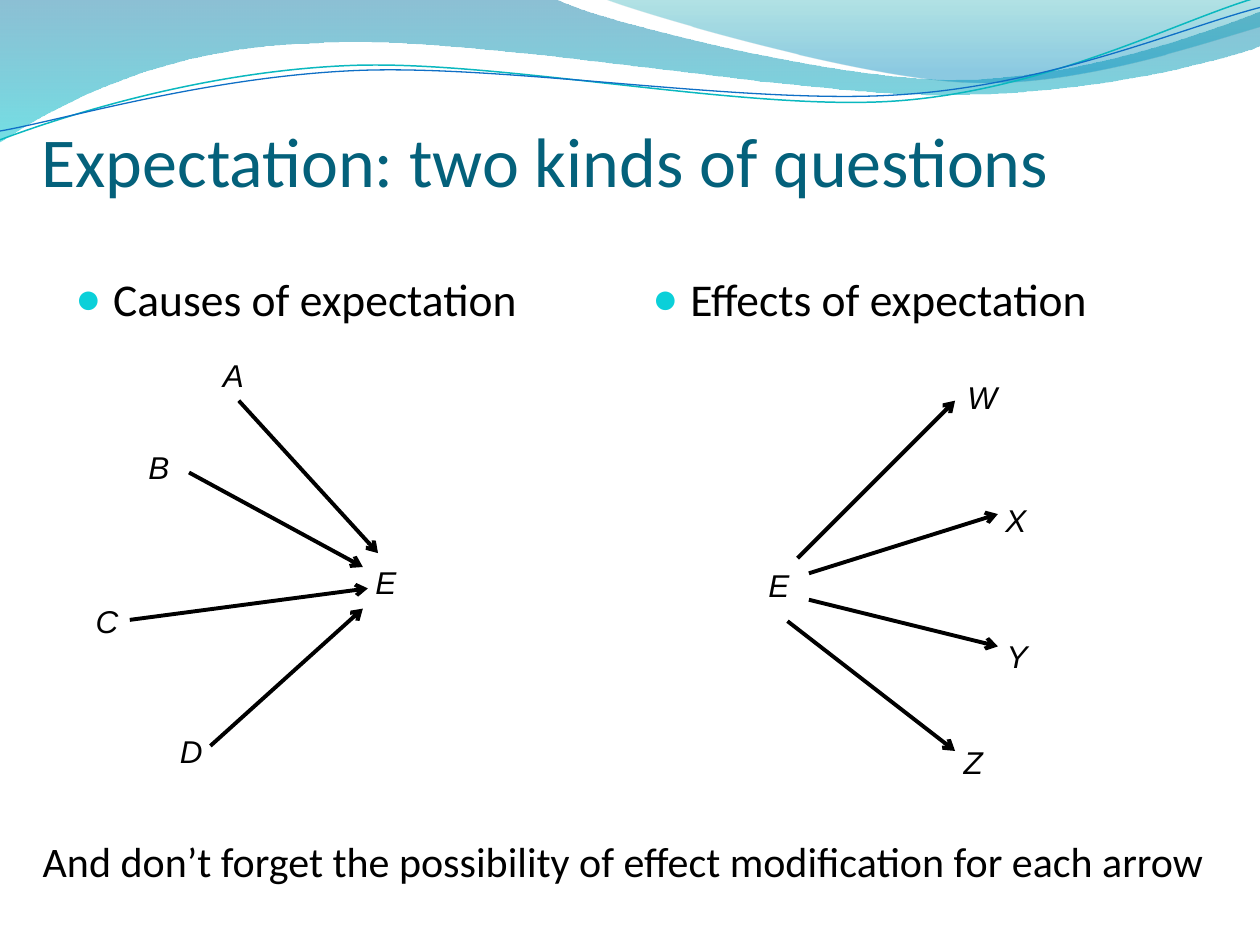
from dataclasses import dataclass
from math import cos, radians, sin

from lxml.etree import SubElement
from pptx import Presentation
from pptx.dml.color import RGBColor
from pptx.enum.shapes import MSO_CONNECTOR
from pptx.enum.text import MSO_ANCHOR, MSO_AUTO_SIZE
from pptx.oxml.ns import qn
from pptx.util import Emu, Inches, Pt

COLUMNS, ROWS = 100, 75
WIDTH, HEIGHT = Inches(10), Inches(7.5)
LABEL_WIDTH, LABEL_HEIGHT = 4.5, 4
BLACK, TITLE_BLUE, BULLET_CYAN = "000000", "04617B", "0BD0D9"
BOTTOM_SIDE = 2
TILT = 357.3


@dataclass
class Band:
    """A filled wave: lines of one point and curves of three, in grid units."""
    start: tuple
    segments: list
    stops: list


@dataclass
class Strand:
    """A thin wave line tilted about its centre."""
    start: tuple
    segments: list
    centre: tuple
    color: str
    weight: float


@dataclass
class Spoke:
    """A letter and the arrow between it and the hub of its fan."""
    letter: str
    place: tuple
    start: tuple
    end: tuple
    joined: bool = False


@dataclass
class Fan:
    """A heading with a hub letter and its spokes."""
    heading: str
    left: float
    hub: tuple
    spokes: list


BANDS = [
    Band((0, 0), [[(44, -.1)], [(47.6, 1.7), (66.4, 6.3), (75.8, 6.3)],
                  [(85.3, 6.3), (95.8, 2.6), (100, .9)], [(100.1, 3.6)],
                  [(98.3, 4.4), (87, 7.6), (74.6, 7.5)], [(62.2, 7.5), (38.2, 2.8), (25.7, 3.4)],
                  [(12.9, 3.6), (4.6, 8.3), (-.1, 11.3)], [(0, 0)]],
         [(0, "0074A1", 45), (1, "00C6CF", 55)]),
    Band((47.9, -.1), [[(50.9, 1.1), (68.2, 6.2), (76.9, 6.5)], [(85.6, 6.9), (96.1, 3.2), (100, 2.1)],
                       [(100, 0)], [(47.9, -.1)]],
         [(0, "00A1A9", 30), (.8, "008BBF", 45)]),
]
STRANDS = [
    Strand((0, 11.1), [[(4.8, 9.3), (15.8, 5.7), (27.7, 5.2)], [(39.5, 4.7), (59.3, 8.9), (71.3, 8)],
                       [(83.3, 7.1), (93.8, 1.5), (99.8, -.2)]], (49.9, 5.75), "0AB8BF", .85),
    Strand((0, 10.4), [[(4.7, 9.6), (16.4, 6.1), (28.3, 5.6)], [(40.3, 5.1), (59.7, 8.4), (71.7, 7.5)],
                       [(83.6, 6.7), (94.1, 2.1), (100, .6)]], (50, 5.9), "0F6FC6", .75),
]
FANS = [
    Fan("Causes of expectation", 5, (28.8, 44.2), [
        Spoke("A", (16.7, 27.8), (18.9, 31.8), (30, 43.9), True),
        Spoke("B", (10.8, 35.1), (15, 37.5), (28.8, 45)),
        Spoke("C", (6.6, 47.3), (10.3, 49.2), (29.2, 46.7)),
        Spoke("D", (13.3, 57.6), (16.7, 59.2), (28.8, 48.3))]),
    Fan("Effects of expectation", 50.8, (60, 44.4), [
        Spoke("W", (75.8, 29.5), (63.3, 44.3), (75.8, 31.8)),
        Spoke("X", (78.8, 39.3), (64.2, 45.5), (79.2, 40.8)),
        Spoke("Y", (78.9, 50.1), (64.2, 47.6), (79.2, 51.3)),
        Spoke("Z", (75.5, 58.5), (62.5, 49.3), (75.8, 59.6))]),
]


def column(units: float) -> Emu:
    """Turn grid columns into a length."""
    return Emu(round(WIDTH * units / COLUMNS))


def row(units: float) -> Emu:
    """Turn grid rows into a length."""
    return Emu(round(HEIGHT * units / ROWS))


def color(value: str) -> RGBColor:
    """Read a hex colour."""
    return RGBColor.from_string(value)


def assign(target, values: dict) -> None:
    """Set every attribute named in the dict."""
    for name, value in values.items():
        setattr(target, name, value)


def turn(point: tuple, centre: tuple, degrees: float) -> tuple:
    """Turn a point clockwise about a centre."""
    angle = radians(degrees)
    x, y = point[0] - centre[0], point[1] - centre[1]
    return (centre[0] + x * cos(angle) - y * sin(angle), centre[1] + x * sin(angle) + y * cos(angle))


def draw_outline(page, start: tuple, segments: list, closed: bool):
    """Build a freeform and make each three-point segment a cubic curve."""
    spots = [(column(x), row(y)) for x, y in [start, *sum(segments, [])]]
    builder = page.shapes.build_freeform(*spots[0], scale=1.0)
    builder.add_line_segments(spots[1:], close=closed)
    shape = builder.convert_to_shape()
    shape.shadow.inherit = False
    lines = iter(list(shape._element.spPr.iter(qn("a:lnTo"))))
    for segment in segments:
        first, *others = [next(lines) for _ in segment]
        if others:
            first.tag = qn("a:cubicBezTo")
        for other in others:
            first.append(other[0])
            other.getparent().remove(other)
    return shape


def draw_band(page, band: Band) -> None:
    """Draw a wave with a translucent vertical gradient."""
    shape = draw_outline(page, band.start, band.segments, True)
    shape.line.fill.background()
    shape.fill.gradient()
    shape.fill.gradient_angle = 270
    for stop, (position, tint, _) in zip(shape.fill.gradient_stops, band.stops):
        stop.position = position
        stop.color.rgb = color(tint)
    tints = shape._element.spPr.find(qn("a:gradFill")).iter(qn("a:srgbClr"))
    for tint, (_, _, opacity) in zip(tints, band.stops):
        SubElement(tint, qn("a:alpha"), val=str(opacity * 1000))


def draw_strand(page, strand: Strand) -> None:
    """Draw a tilted wave line."""
    start, *segments = [[turn(point, strand.centre, 360 - TILT) for point in segment]
                        for segment in [[strand.start], *strand.segments]]
    shape = draw_outline(page, start[0], segments, False)
    shape.rotation = TILT
    shape.fill.background()
    shape.line.color.rgb = color(strand.color)
    shape.line.width = Pt(strand.weight)


def draw_text(page, text: str, place: tuple, size: tuple, font: dict, tint: str = BLACK, **frame):
    """Add a text box holding one paragraph."""
    box = page.shapes.add_textbox(column(place[0]), row(place[1]), column(size[0]), row(size[1]))
    assign(box.text_frame, {"word_wrap": True, "auto_size": MSO_AUTO_SIZE.NONE, **frame})
    span = box.text_frame.paragraphs[0].add_run()
    span.text = text
    assign(span.font, font)
    span.font.color.rgb = color(tint)
    return box


def draw_heading(page, fan: Fan) -> None:
    """Write the bulleted heading of a fan."""
    box = draw_text(page, fan.heading, (fan.left, 21), (44.2, 48.5), {"name": "Calibri", "size": Pt(26)})
    para = box.text_frame.paragraphs[0]
    para.space_before = Pt(5.2)
    properties = para._p.get_or_add_pPr()
    properties.set("marL", str(Inches(.3)))
    properties.set("indent", str(-Inches(.3)))
    SubElement(SubElement(properties, qn("a:buClr")), qn("a:srgbClr"), val=BULLET_CYAN)
    SubElement(properties, qn("a:buSzPct"), val="95000")
    SubElement(properties, qn("a:buFont"), typeface="Arial")
    SubElement(properties, qn("a:buChar"), char="●")


def draw_letter(page, letter: str, place: tuple):
    """Write an italic letter of a fan."""
    font = {"name": "Arial", "size": Pt(18), "italic": True}
    return draw_text(page, letter, place, (LABEL_WIDTH, LABEL_HEIGHT), font,
                     auto_size=MSO_AUTO_SIZE.SHAPE_TO_FIT_TEXT)


def draw_spoke(page, spoke: Spoke) -> None:
    """Draw a letter with its arrow."""
    box = draw_letter(page, spoke.letter, spoke.place)
    ends = (column(spoke.start[0]), row(spoke.start[1]), column(spoke.end[0]), row(spoke.end[1]))
    arrow = page.shapes.add_connector(MSO_CONNECTOR.STRAIGHT, *ends)
    if spoke.joined:
        arrow.begin_connect(box, BOTTOM_SIDE)
    arrow.line.color.rgb = color(BLACK)
    arrow.line.width = Pt(2.25)
    SubElement(arrow.line._get_or_add_ln(), qn("a:tailEnd"), type="arrow")
    SubElement(arrow._element.spPr, qn("a:effectLst"))


def main() -> None:
    """Build the slide and save it."""
    deck = Presentation()
    assign(deck, {"slide_width": WIDTH, "slide_height": HEIGHT})
    page = deck.slides.add_slide(deck.slide_layouts[6])
    for band in BANDS:
        draw_band(page, band)
    for strand in STRANDS:
        draw_strand(page, strand)
    draw_text(page, "Expectation: two kinds of questions", (3.3, 7.5), (95.8, 8.5),
              {"name": "Calibri", "size": Pt(40)}, TITLE_BLUE, vertical_anchor=MSO_ANCHOR.BOTTOM,
              margin_left=0, margin_right=0, margin_bottom=0)
    for fan in FANS:
        draw_heading(page, fan)
        draw_letter(page, "E", fan.hub)
        for spoke in fan.spokes:
            draw_spoke(page, spoke)
    draw_text(page, "And don’t forget the possibility of effect modification for each arrow",
              (2.4, 65.8), (95.1, 5), {"name": "Calibri", "size": Pt(24)}, word_wrap=False,
              auto_size=MSO_AUTO_SIZE.SHAPE_TO_FIT_TEXT)
    deck.save("out.pptx")


if __name__ == "__main__":
    main()
